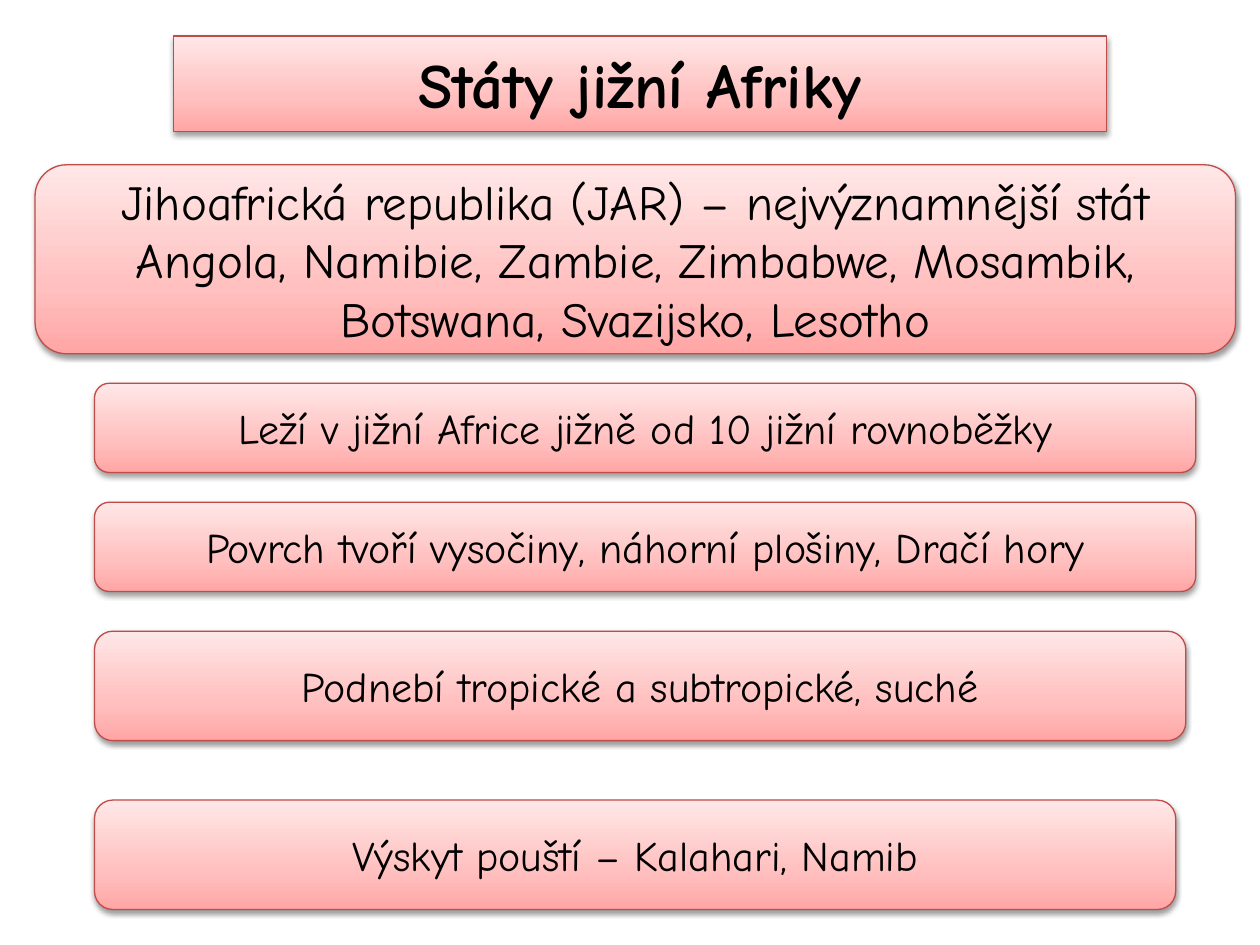
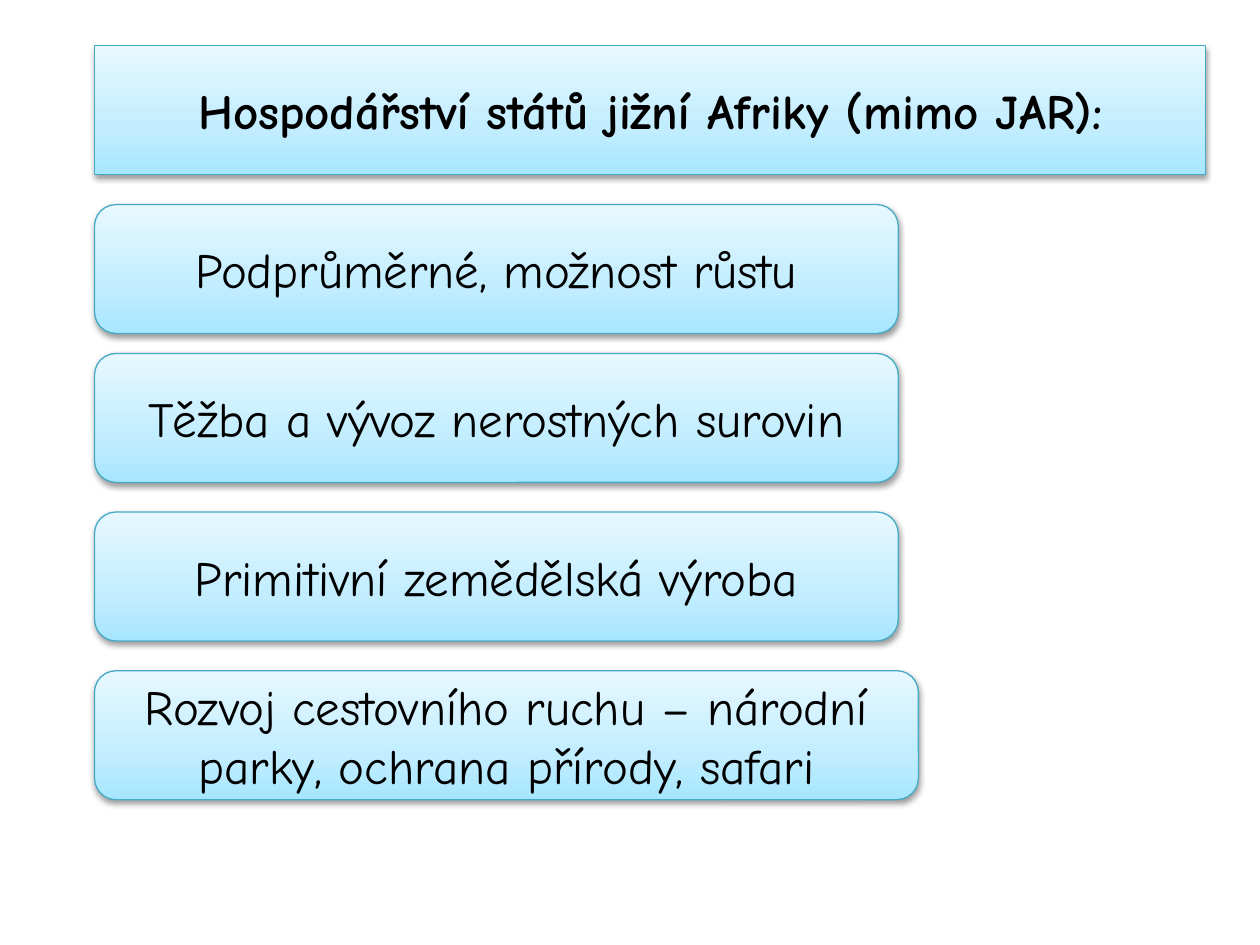
from dataclasses import dataclass

import pptx
import pptx.dml.color
import pptx.enum.shapes
import pptx.enum.text
import pptx.util
from lxml import etree
from copy import deepcopy
from pptx.oxml.ns import qn

Pt = pptx.util.Pt

# Shared look
FONT = "Comic Neue"
TEXT_COLOUR = "000000"
LEFT = 54
SHADOW = {"blurRad": Pt(3.15), "dist": Pt(1.57), "dir": 90 * 60000,
          "algn": "ctr", "rotWithShape": 0}
SHADOW_OPACITY = 38
STOP_POSITIONS = (0, 0.35, 1)
FRAME_FORMAT = {
    "word_wrap": True,
    "auto_size": pptx.enum.text.MSO_AUTO_SIZE.NONE,
    "vertical_anchor": pptx.enum.text.MSO_ANCHOR.MIDDLE,
    "margin_left": Pt(7.2), "margin_right": Pt(7.2),
    "margin_top": Pt(3.6), "margin_bottom": Pt(3.6),
}


@dataclass(frozen=True)
class Theme:
    stops: tuple[str, str, str]
    outline: str


@dataclass(frozen=True)
class Panel:
    lines: tuple[str, ...]
    left: float
    top: float
    width: float
    height: float
    size: float
    bold: bool = False


RED = Theme(("FFA6A5", "FFC0BF", "FFE7E7"), "BF4C48")
BLUE = Theme(("A7E6FF", "C1EDFF", "E7F8FF"), "46AAC5")


def colour(hex_value: str) -> pptx.dml.color.RGBColor:
    return pptx.dml.color.RGBColor.from_string(hex_value)


def set_all(target, values: dict) -> None:
    for name, value in values.items():
        setattr(target, name, value)


def paint(shape, theme: Theme) -> None:
    """Give a panel its gradient, outline and soft shadow."""
    shape.fill.gradient()
    shape.fill.gradient_angle = 90
    properties = shape._element.spPr
    stop_list = properties.find(".//" + qn("a:gsLst"))
    stop_list.append(deepcopy(stop_list[-1]))
    for stop, position, tint in zip(shape.fill.gradient_stops, STOP_POSITIONS, theme.stops):
        stop.position = position
        stop.color.rgb = colour(tint)
    shape.line.color.rgb = colour(theme.outline)
    shape.line.width = Pt(0.75)

    shape.shadow.inherit = False
    shadow = etree.SubElement(properties.find(qn("a:effectLst")), qn("a:outerShdw"),
                              {key: str(value) for key, value in SHADOW.items()})
    shade = etree.SubElement(shadow, qn("a:srgbClr"), val="000000")
    etree.SubElement(shade, qn("a:alpha"), val=str(SHADOW_OPACITY * 1000))


def write(shape, panel: Panel) -> None:
    frame = shape.text_frame
    set_all(frame, FRAME_FORMAT)
    frame.text = "\n".join(panel.lines)
    for paragraph in frame.paragraphs:
        paragraph.alignment = pptx.enum.text.PP_ALIGN.CENTER
        set_all(paragraph.font, {"name": FONT, "size": Pt(panel.size), "bold": panel.bold})
        paragraph.font.color.rgb = colour(TEXT_COLOUR)


def place_title(slide, panel: Panel):
    """Move the title placeholder and round its corners."""
    title = slide.shapes.title
    set_all(title, {name: Pt(getattr(panel, name))
                    for name in ("left", "top", "width", "height")})
    outline = etree.Element(qn("a:prstGeom"), prst="roundRect")
    etree.SubElement(outline, qn("a:avLst"))
    title._element.spPr.find(qn("a:xfrm")).addnext(outline)
    return title


def place_panel(slide, panel: Panel):
    return slide.shapes.add_shape(
        pptx.enum.shapes.MSO_SHAPE.ROUNDED_RECTANGLE,
        Pt(panel.left), Pt(panel.top), Pt(panel.width), Pt(panel.height))


def build_slide(deck, theme: Theme, heading: Panel, panels: list[Panel]) -> None:
    slide = deck.slides.add_slide(deck.slide_layouts[5])
    placed = [(place_title(slide, heading), heading)]
    placed += [(place_panel(slide, panel), panel) for panel in panels]
    for shape, panel in placed:
        paint(shape, theme)
        write(shape, panel)


def main() -> None:
    deck = pptx.Presentation()
    set_all(deck, {"slide_width": Pt(720), "slide_height": Pt(540)})

    # States of southern Africa
    countries = Panel(
        ("Jihoafrická republika (JAR) – nejvýznamnější stát",
         "Angola, Namibie, Zambie, Zimbabwe, Mosambik, Botswana, Svazijsko, Lesotho"),
        20, 94.2, 686, 108, 28)
    facts = [
        ("Leží v jižní Africe jižně od 10 jižní rovnoběžky", 219, 629.3, 51),
        ("Povrch tvoří vysočiny, náhorní plošiny, Dračí hory", 287, 629.3, 51),
        ("Podnebí tropické a subtropické, suché", 360.7, 623.6, 62.5),
        ("Výskyt pouští – Kalahari, Namib", 457.2, 617.8, 62.5),
    ]
    build_slide(
        deck, RED,
        Panel(("Státy jižní Afriky",), 99.2, 20.6, 533, 54.5, 36, bold=True),
        [countries] + [Panel((text,), LEFT, top, width, height, 24)
                       for text, top, width, height in facts])

    # Economy of the region
    row_height = 73.7
    economy = [
        ("Podprůměrné, možnost růstu", 116.9, 459.3),
        ("Těžba a vývoz nerostných surovin", 202, 459.3),
        ("Primitivní zemědělská výroba", 292.6, 459.3),
        ("Rozvoj cestovního ruchu – národní parky, ochrana přírody, safari", 383.3, 470.8),
    ]
    build_slide(
        deck, BLUE,
        Panel(("Hospodářství států jižní Afriky (mimo JAR):",),
              LEFT, 26, 635, row_height, 28, bold=True),
        [Panel((text,), LEFT, top, width, row_height, 28) for text, top, width in economy])

    deck.save("out.pptx")


if __name__ == "__main__":
    main()
